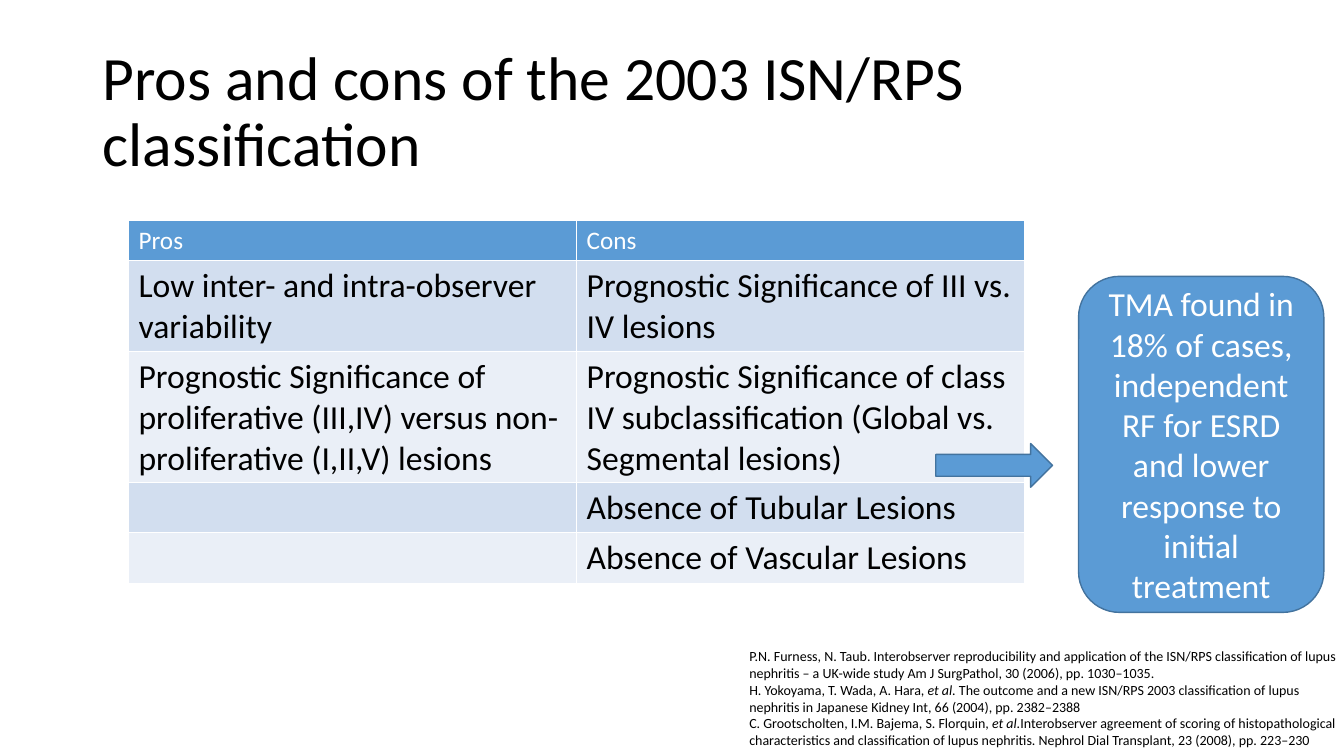
from pptx import Presentation
from pptx import util as u
from pptx.dml.color import RGBColor
from pptx.enum import shapes, text

BLACK = RGBColor(0x00, 0x00, 0x00)
WHITE = RGBColor(0xFF, 0xFF, 0xFF)
BLUE = RGBColor(0x5B, 0x9B, 0xD5)
DARK_BLUE = RGBColor(0x43, 0x73, 0x9E)
BANDS = [RGBColor(0xEA, 0xEF, 0xF7), RGBColor(0xD2, 0xDE, 0xEF)]

PROS_AND_CONS = [
    ("Pros", "Cons"),
    ("Low inter- and intra-observer variability",
     "Prognostic Significance of III vs. IV lesions"),
    ("Prognostic Significance of proliferative (III,IV) versus non-proliferative (I,II,V) lesions",
     "Prognostic Significance of class IV subclassification (Global vs. Segmental lesions)"),
    ("", "Absence of Tubular Lesions"),
    ("", "Absence of Vascular Lesions"),
]
ROW_HEIGHTS = [4.8, 10.8, 15.6, 6, 6]

REFERENCES = [
    "P.N. Furness, N. Taub. Interobserver reproducibility and application of the ISN/RPS "
    "classification of lupus nephritis – a UK-wide study Am J SurgPathol, 30 (2006), pp. 1030–1035.",
    "H. Yokoyama, T. Wada, A. Hara, et al. The outcome and a new ISN/RPS 2003 classification "
    "of lupus nephritis in Japanese Kidney Int, 66 (2004), pp. 2382–2388",
    "C. Grootscholten, I.M. Bajema, S. Florquin, et al.Interobserver agreement of scoring of "
    "histopathological characteristics and classification of lupus nephritis. "
    "Nephrol Dial Transplant, 23 (2008), pp. 223–230",
]


class Slide:
    font = "Calibri"
    columns, rows = 160, 90

    def __init__(self, deck):
        self.deck = deck
        self.page = deck.slides.add_slide(deck.slide_layouts[5])

    def across(self, count):
        return round(self.deck.slide_width * count / self.columns)

    def down(self, count):
        return round(self.deck.slide_height * count / self.rows)

    def area(self, left, top, width, height):
        return self.across(left), self.down(top), self.across(width), self.down(height)

    def style(self, frame, size, color):
        for para in frame.paragraphs:
            for span in para.runs:
                span.font.name = self.font
                span.font.size = u.Pt(size)
                span.font.color.rgb = color

    def title(self, words, area):
        box = self.page.shapes.title
        box.left, box.top, box.width, box.height = self.area(*area)
        frame = box.text_frame
        frame.text = words
        frame.word_wrap = True
        frame.vertical_anchor = text.MSO_ANCHOR.MIDDLE
        frame.paragraphs[0].alignment = text.PP_ALIGN.LEFT
        frame.paragraphs[0].line_spacing = 0.9
        self.style(frame, 44, BLACK)

    def table(self, records, heights, left, top, width):
        area = self.area(left, top, width, sum(heights))
        grid = self.page.shapes.add_table(len(records), len(records[0]), *area).table
        for index, (record, height) in enumerate(zip(records, heights)):
            grid.rows[index].height = self.down(height)
            header = index == 0
            for column, words in enumerate(record):
                cell = grid.cell(index, column)
                cell.fill.solid()
                cell.fill.fore_color.rgb = BLUE if header else BANDS[index % 2]
                cell.text_frame.text = words
                self.style(cell.text_frame, 18 if header else 24, WHITE if header else BLACK)
                for span in cell.text_frame.paragraphs[0].runs:
                    span.font.bold = False

    def shape(self, kind, area, words=""):
        box = self.page.shapes.add_shape(kind, *self.area(*area))
        box.shadow.inherit = False
        box.fill.solid()
        box.fill.fore_color.rgb = BLUE
        box.line.color.rgb = DARK_BLUE
        box.line.width = u.Pt(1)
        if words:
            frame = box.text_frame
            frame.text = words
            frame.word_wrap = True
            frame.vertical_anchor = text.MSO_ANCHOR.MIDDLE
            frame.paragraphs[0].alignment = text.PP_ALIGN.CENTER
            self.style(frame, 24, WHITE)

    def references(self, entries, area):
        frame = self.page.shapes.add_textbox(*self.area(*area)).text_frame
        frame.word_wrap = True
        frame.vertical_anchor = text.MSO_ANCHOR.BOTTOM
        frame.margin_left = u.Inches(0.6)
        for index, entry in enumerate(entries):
            para = frame.add_paragraph() if index else frame.paragraphs[0]
            for words in filter(None, entry.partition("et al.")):
                span = para.add_run()
                span.text = words
                span.font.italic = words == "et al."
        self.style(frame, 10, BLACK)


def main():
    deck = Presentation()
    deck.slide_width, deck.slide_height = u.Inches(13.33), u.Inches(7.5)
    slide = Slide(deck)
    slide.title("Pros and cons of the 2003 ISN/RPS classification", (11, 4.8, 138, 17.4))
    slide.references(REFERENCES, (82, 72.8, 80, 16.9))
    slide.table(PROS_AND_CONS, ROW_HEIGHTS, 15.3, 26.2, 106.7)
    slide.shape(shapes.MSO_SHAPE.RIGHT_ARROW, (111.4, 52.8, 13.9, 5.2))
    slide.shape(
        shapes.MSO_SHAPE.ROUNDED_RECTANGLE,
        (128.4, 32.9, 29.2, 40),
        "TMA found in 18% of cases, independent RF for ESRD and lower response to initial treatment",
    )
    deck.save("out.pptx")


if __name__ == "__main__":
    main()
